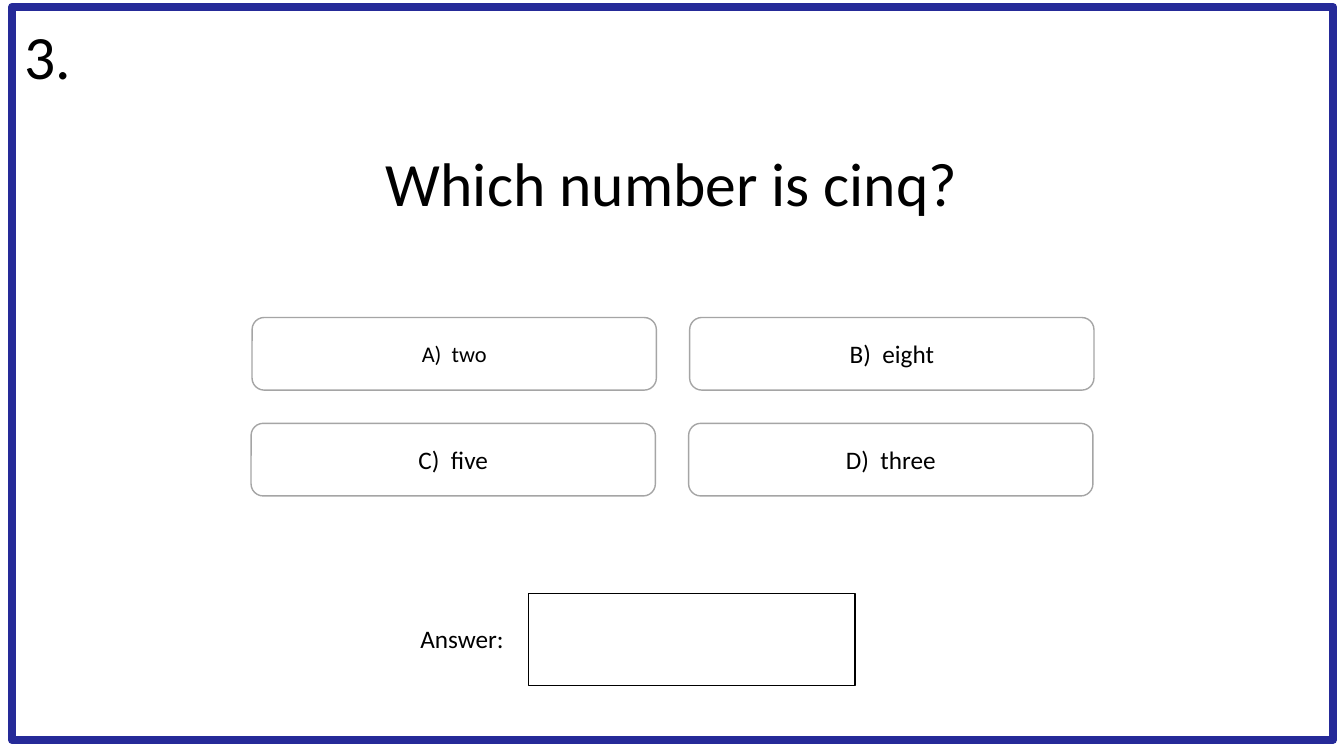
"""Build a French number quiz slide with four options and an answer box."""
from pptx import Presentation
from pptx import util as u
from pptx.dml.color import RGBColor
from pptx.enum import shapes, text

BLACK = RGBColor(0x00, 0x00, 0x00)
WHITE = RGBColor(0xFF, 0xFF, 0xFF)
GREY = RGBColor(0xA5, 0xA5, 0xA5)
NAVY = RGBColor(0x25, 0x2A, 0x98)


def add_box(kind, left, top, width, height, line_color, line_width):
    box = slide.shapes.add_shape(
        kind, u.Inches(left), u.Inches(top), u.Inches(width), u.Inches(height))
    box.shadow.inherit = False
    box.fill.background()
    box.line.color.rgb = line_color
    box.line.width = u.Pt(line_width)
    return box


def write(frame, words, size, align, spacing=1.0, anchor=text.MSO_ANCHOR.MIDDLE):
    frame.vertical_anchor = anchor
    paragraph = frame.paragraphs[0]
    paragraph.alignment = align
    paragraph.line_spacing = spacing
    for word in words:
        run = paragraph.add_run()
        run.text = word
        run.font.size = u.Pt(size)
        run.font.name = "Calibri"
        run.font.color.rgb = BLACK
        if word == " ":
            run._r.get_or_add_rPr().set("spc", str(round(size * 22.6)))


deck = Presentation()
deck.slide_width, deck.slide_height = u.Inches(13.33), u.Inches(7.5)
slide = deck.slides.add_slide(deck.slide_layouts[5])

question = slide.shapes.title
question.left, question.top = u.Inches(2.17), u.Inches(0.98)
question.width, question.height = u.Inches(8.99), u.Inches(1.74)
write(question.text_frame, ["Which number is cinq?"], 44, text.PP_ALIGN.CENTER, 0.9)

options = [("A)", "two", 16), ("B)", "eight", 18), ("C)", "five", 18), ("D)", "three", 18)]
for index, (letter, answer, size) in enumerate(options):
    row, column = divmod(index, 2)
    option = add_box(shapes.MSO_SHAPE.ROUNDED_RECTANGLE,
                     2.5 + 4.34 * column - 0.01 * row, 3.15 + 1.05 * row,
                     4.01, 0.72, GREY, 1)
    option.fill.solid()
    option.fill.fore_color.rgb = WHITE
    write(option.text_frame, [letter, " ", answer], size, text.PP_ALIGN.CENTER)

number = slide.shapes.add_textbox(
    u.Inches(0.14), u.Inches(0.13), u.Inches(0.78), u.Inches(0.92))
number.text_frame.word_wrap = True
write(number.text_frame, ["3."], 44, text.PP_ALIGN.LEFT, 0.9)

add_box(shapes.MSO_SHAPE.RECTANGLE, 0.12, 0.07, 13.1, 7.27, NAVY, 6)

answer_label = slide.shapes.add_textbox(
    u.Inches(4.07), u.Inches(6.13), u.Inches(1.18), u.Inches(0.4))
answer_label.text_frame.word_wrap = True
answer_label.text_frame.auto_size = text.MSO_AUTO_SIZE.SHAPE_TO_FIT_TEXT
write(answer_label.text_frame, ["Answer:"], 18, text.PP_ALIGN.LEFT,
      anchor=text.MSO_ANCHOR.TOP)

add_box(shapes.MSO_SHAPE.RECTANGLE, 5.24, 5.89, 3.24, 0.91, BLACK, 1)

deck.save("out.pptx")
